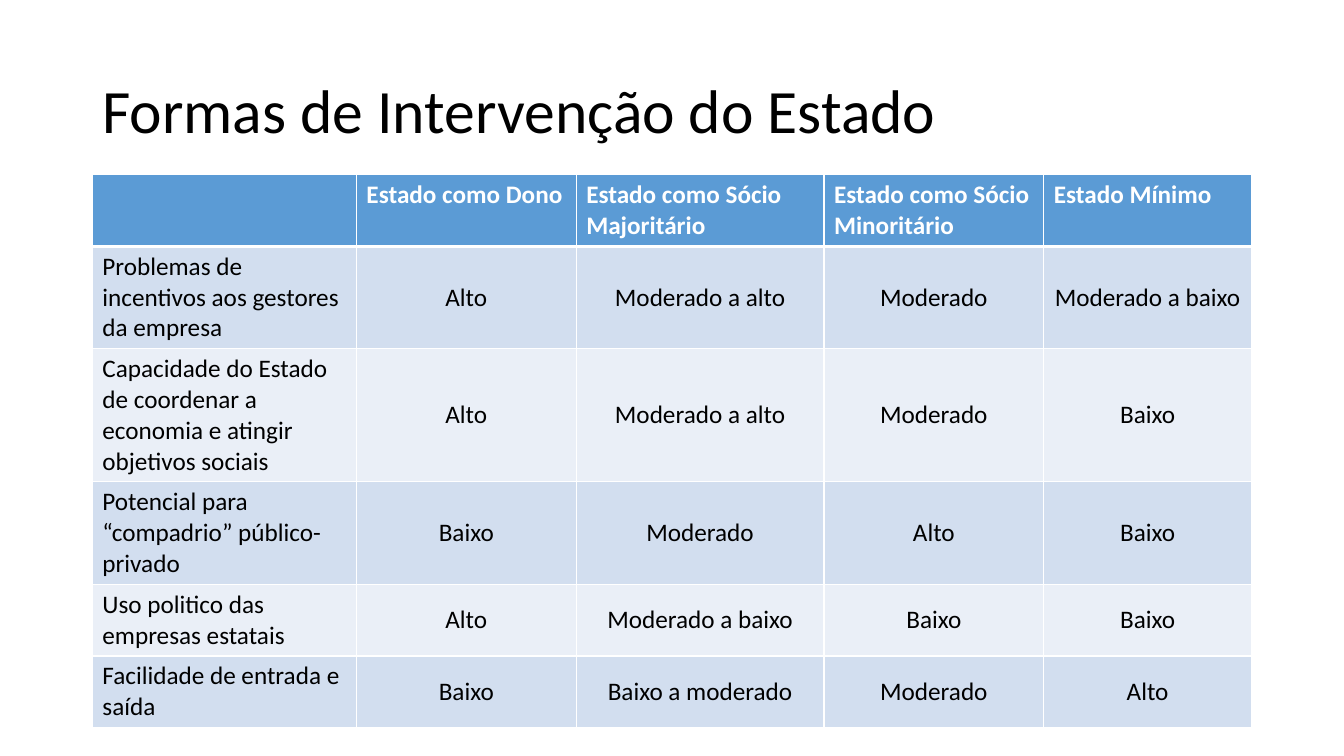
from lxml.etree import SubElement
from pptx import Presentation
from pptx.dml.color import RGBColor
from pptx.enum.text import MSO_ANCHOR as Anchor, MSO_AUTO_SIZE as AutoSize, PP_ALIGN as Align
from pptx.oxml.ns import qn
from pptx.util import Pt

BLACK = RGBColor(0x00, 0x00, 0x00)
WHITE = RGBColor(0xFF, 0xFF, 0xFF)
HEADER = RGBColor(0x5B, 0x9B, 0xD5)
BANDS = (RGBColor(0xD2, 0xDE, 0xEF), RGBColor(0xEA, 0xEF, 0xF7))

COL_WIDTHS = (188.6, 157, 177, 157, 148.4)
ROW_HEIGHTS = (51, 73, 95, 73, 51, 51)
ROWS = (
    ("", "Estado como Dono", "Estado como Sócio Majoritário",
     "Estado como Sócio Minoritário", "Estado Mínimo"),
    ("Problemas de incentivos aos gestores da empresa",
     "Alto", "Moderado a alto", "Moderado", "Moderado a baixo"),
    ("Capacidade do Estado de coordenar a economia e atingir objetivos sociais",
     "Alto", "Moderado a alto", "Moderado", "Baixo"),
    ("Potencial para “compadrio” público-privado",
     "Baixo", "Moderado", "Alto", "Baixo"),
    ("Uso politico das empresas estatais",
     "Alto", "Moderado a baixo", "Baixo", "Baixo"),
    ("Facilidade de entrada e saída",
     "Baixo", "Baixo a moderado", "Moderado", "Alto"),
)


def write(tf, text, size=18, color=BLACK, bold=False, align=Align.LEFT, spacing=None):
    """Put one formatted paragraph into a text frame."""
    p = tf.paragraphs[0]
    p.text = text
    p.alignment = align
    p.line_spacing = spacing
    p.font.name = "Calibri"
    p.font.size = Pt(size)
    p.font.bold = bold
    p.font.color.rgb = color


def set_borders(cell, top=1, bottom=1):
    """Draw white lines on the four sides of a cell."""
    tcPr = cell._tc.get_or_add_tcPr()
    for side, width in (("L", 1), ("R", 1), ("T", top), ("B", bottom)):
        ln = SubElement(tcPr, qn(f"a:ln{side}"), w=str(Pt(width)))
        SubElement(SubElement(ln, qn("a:solidFill")), qn("a:srgbClr"), val=str(WHITE))


def add_title(s, text, left, top, width, height):
    """Place and format the slide title."""
    title = s.shapes.title
    title.left, title.top, title.width, title.height = map(Pt, (left, top, width, height))
    tf = title.text_frame
    tf.auto_size = AutoSize.NONE
    tf.word_wrap = True
    tf.vertical_anchor = Anchor.MIDDLE
    write(tf, text, size=44, spacing=0.9)


def add_comparison(s, left, top):
    """Build the table comparing the forms of state intervention."""
    table = s.shapes.add_table(len(ROWS), len(COL_WIDTHS), Pt(left), Pt(top),
                               Pt(sum(COL_WIDTHS)), Pt(sum(ROW_HEIGHTS))).table
    for col, width in zip(table.columns, COL_WIDTHS):
        col.width = Pt(width)
    for i, (row, height, texts) in enumerate(zip(table.rows, ROW_HEIGHTS, ROWS)):
        row.height = Pt(height)
        is_header = i == 0
        for j, (cell, text) in enumerate(zip(row.cells, texts)):
            is_rating = i > 0 and j > 0
            set_borders(cell, top=3 if i == 1 else 1, bottom=3 if is_header else 1)
            cell.fill.solid()
            cell.fill.fore_color.rgb = HEADER if is_header else BANDS[(i - 1) % 2]
            cell.vertical_anchor = Anchor.MIDDLE if is_rating else Anchor.TOP
            write(cell.text_frame, text, color=WHITE if is_header else BLACK,
                  bold=is_header, align=Align.CENTER if is_rating else Align.LEFT)


def main():
    """Create the presentation."""
    prs = Presentation()
    prs.slide_width, prs.slide_height = Pt(960), Pt(540)
    s = prs.slides.add_slide(prs.slide_layouts[5])
    add_title(s, "Formas de Intervenção do Estado", 66, 28.75, 828, 104.4)
    add_comparison(s, 66, 124.8)
    prs.save("out.pptx")


if __name__ == "__main__":
    main()
